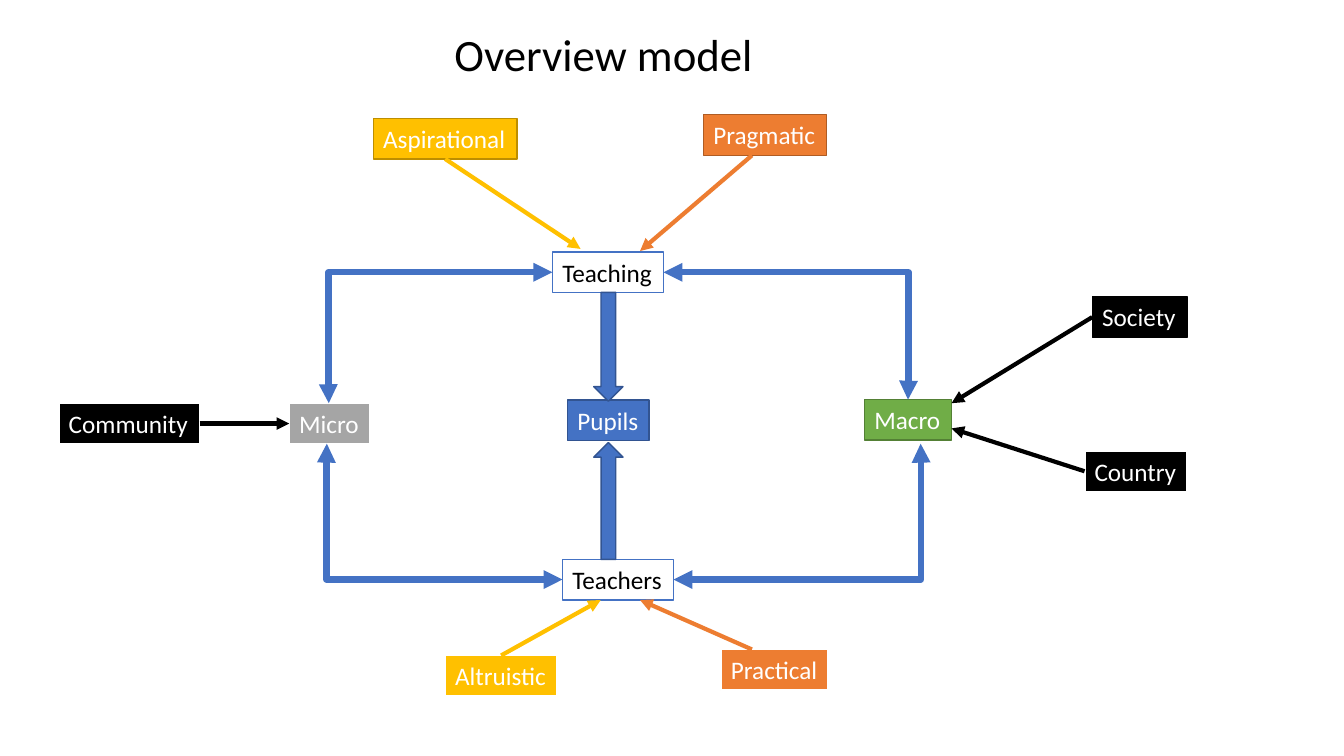
import pptx
import pptx.util
import pptx.dml.color
import pptx.enum.shapes
import pptx.enum.text
import pptx.oxml.ns
import lxml.etree

Pt = pptx.util.Pt
RGBColor = pptx.dml.color.RGBColor
SHAPE = pptx.enum.shapes.MSO_SHAPE
CONNECTOR = pptx.enum.shapes.MSO_CONNECTOR
qn = pptx.oxml.ns.qn

WHITE = RGBColor(0xFF, 0xFF, 0xFF)
BLACK = RGBColor(0x00, 0x00, 0x00)
BLUE = RGBColor(0x44, 0x72, 0xC4)
DARK_BLUE = RGBColor(0x32, 0x54, 0x91)
GREEN = RGBColor(0x70, 0xAD, 0x47)
DARK_GREEN = RGBColor(0x53, 0x80, 0x35)
GRAY = RGBColor(0xA5, 0xA5, 0xA5)
GOLD = RGBColor(0xFF, 0xC0, 0x00)
DARK_GOLD = RGBColor(0xBD, 0x8E, 0x00)
ORANGE = RGBColor(0xED, 0x7D, 0x31)
DARK_ORANGE = RGBColor(0xAF, 0x5C, 0x24)

FONT = "Calibri"
BOX_HEIGHT = 29.08
TOP, LEFT, BOTTOM, RIGHT = range(4)

BOXES = [
    ("Pupils", 405.4, 285.8, 58.3, BLUE, DARK_BLUE),
    ("Teaching", 394.6, 180, 79.4, WHITE, BLUE),
    ("Teachers", 401.8, 399.5, 79.4, WHITE, BLUE),
    ("Macro", 617.5, 285.4, 62.2, GREEN, DARK_GREEN),
    ("Micro", 206.6, 288, 57.6, GRAY, WHITE),
    ("Altruistic", 318, 468.2, 79.9, GOLD, WHITE),
    ("Aspirational", 266.6, 84.5, 102.8, GOLD, DARK_GOLD),
    ("Pragmatic", 502.4, 82, 88.2, ORANGE, DARK_ORANGE),
    ("Practical", 515, 463.9, 76.8, ORANGE, WHITE),
    ("Community", 42, 288, 100.6, BLACK, WHITE),
    ("Society", 780.2, 212, 67.7, BLACK, BLACK),
    ("Country", 774.7, 322.1, 73.4, BLACK, WHITE),
]

ELBOWS = [
    ((394.6, 194.5), (234.9, 288)),
    ((473.9, 194.5), (648.6, 285.4)),
    ((401.8, 414), (233.5, 317)),
    ((481.1, 414), (657.6, 317)),
]

ARROWS = [
    (("Aspirational", BOTTOM), (414.7, 177.8), GOLD),
    (("Altruistic", TOP), (429.1, 428.6), GOLD),
    ((537.1, 111), (457.2, 179.3), ORANGE),
    ((537.1, 463.9), (457.2, 428.6), ORANGE),
    (("Community", RIGHT), ("Micro", LEFT), BLACK),
    (("Society", LEFT), (679.7, 288), BLACK),
    (("Country", LEFT), (679.7, 306), BLACK),
]


def write_text(shape, text, size=18, color=WHITE):
    frame = shape.text_frame
    frame.word_wrap = False
    frame.auto_size = pptx.enum.text.MSO_AUTO_SIZE.SHAPE_TO_FIT_TEXT
    frame.vertical_anchor = pptx.enum.text.MSO_ANCHOR.TOP
    para = frame.paragraphs[0]
    para.alignment = pptx.enum.text.PP_ALIGN.LEFT
    span = para.add_run()
    span.text = text
    span.font.name = FONT
    span.font.size = Pt(size)
    span.font.color.rgb = color


def add_filled(page, kind, left, top, width, height, fill, line):
    shape = page.shapes.add_shape(kind, Pt(left), Pt(top), Pt(width), Pt(height))
    shape.shadow.inherit = False
    shape.fill.solid()
    shape.fill.fore_color.rgb = fill
    shape.line.color.rgb = line
    shape.line.width = Pt(1.5 if line == WHITE else 1)
    return shape


def add_box(page, text, left, top, width, fill, line):
    box = add_filled(page, SHAPE.RECTANGLE, left, top, width, BOX_HEIGHT, fill, line)
    write_text(box, text, color=BLACK if fill == WHITE else WHITE)
    return box


def add_block_arrow(page, top, height, rotation=0):
    arrow = add_filled(page, SHAPE.DOWN_ARROW, 424.1, top, 20.9, height, BLUE, DARK_BLUE)
    arrow.rotation = rotation


def style_connector(connector, color, width, ends):
    connector.line.color.rgb = color
    connector.line.width = Pt(width)
    line = connector.line._get_or_add_ln()
    for end in ends:
        lxml.etree.SubElement(line, qn(f"a:{end}"), type="triangle")
    lxml.etree.SubElement(connector._element.spPr, qn("a:effectLst"))


def add_elbow(page, start, end):
    points = [Pt(value) for value in start + end]
    elbow = page.shapes.add_connector(CONNECTOR.ELBOW, *points)
    style_connector(elbow, BLUE, 4.5, ("headEnd", "tailEnd"))
    geometry = elbow._element.spPr.find(qn("a:prstGeom"))
    guides = geometry.find(qn("a:avLst"))
    lxml.etree.SubElement(guides, qn("a:gd"), name="adj1", fmla="val 100200")


def add_arrow(page, boxes, start, end, color):
    arrow = page.shapes.add_connector(CONNECTOR.STRAIGHT, 0, 0, 0, 0)
    if start[0] in boxes:
        arrow.begin_connect(boxes[start[0]], start[1])
    else:
        arrow.begin_x, arrow.begin_y = Pt(start[0]), Pt(start[1])
    if end[0] in boxes:
        arrow.end_connect(boxes[end[0]], end[1])
    else:
        arrow.end_x, arrow.end_y = Pt(end[0]), Pt(end[1])
    style_connector(arrow, color, 3, ("tailEnd",))


def main():
    deck = pptx.Presentation()
    deck.slide_width, deck.slide_height = Pt(960), Pt(540)
    page = deck.slides.add_slide(deck.slide_layouts[6])

    boxes = {box[0]: add_box(page, *box) for box in BOXES}
    for start, end in ELBOWS:
        add_elbow(page, start, end)
    add_block_arrow(page, 208.8, 77.8)
    add_block_arrow(page, 316.1, 83.5, rotation=180)
    for start, end, color in ARROWS:
        add_arrow(page, boxes, start, end, color)

    title = page.shapes.add_textbox(Pt(317.5), Pt(15.8), Pt(229.7), Pt(46.1))
    write_text(title, "Overview model", size=32, color=BLACK)

    deck.save("out.pptx")


if __name__ == "__main__":
    main()
